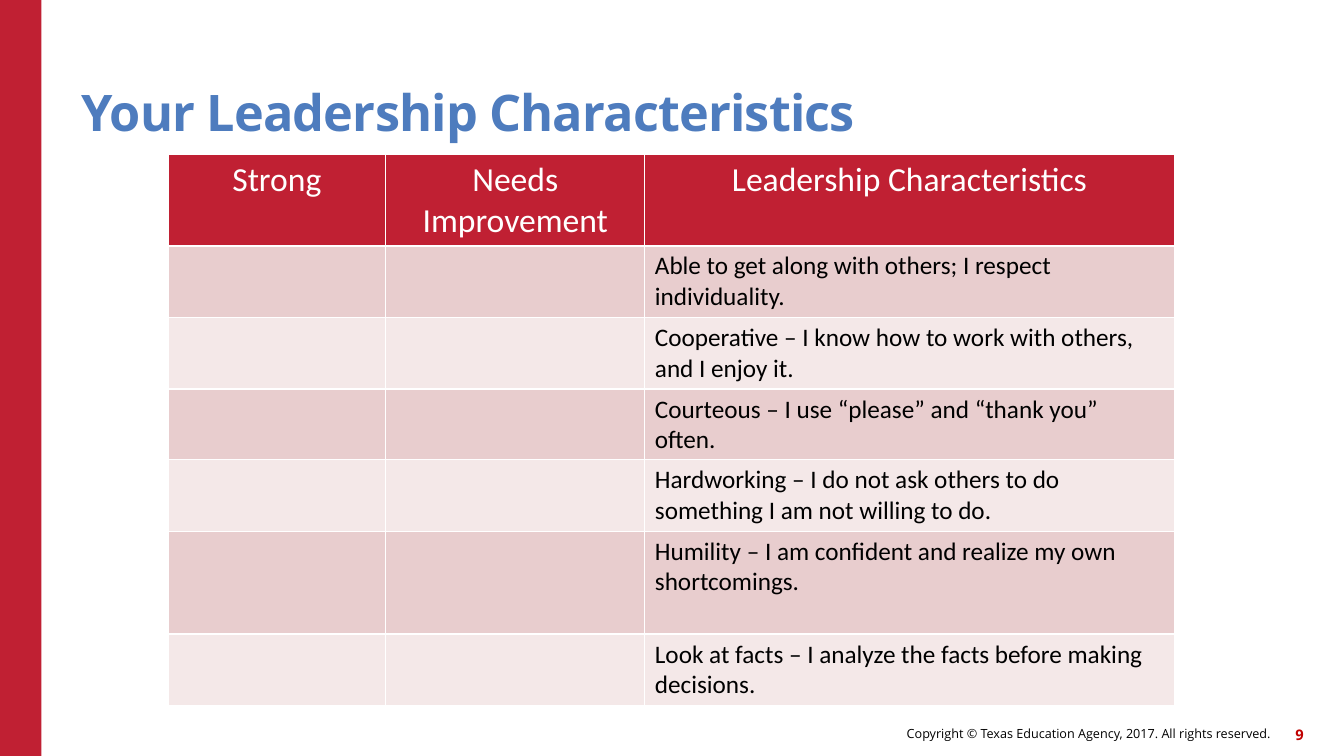
from dataclasses import dataclass

from pptx import Presentation
from pptx import util as u
from pptx.dml.color import RGBColor
from pptx.enum import shapes, text

WIDTH, HEIGHT = 13.33, 7.5
COLOURS = {
    "red": "C02033",
    "number": "C00000",
    "title": "4E7CBE",
    "black": "000000",
    "white": "FFFFFF",
    "odd": "E8CDCE",
    "even": "F4E8E8",
}
COLUMN_WIDTHS = [2.16, 2.57, 5.25]
HEADER_HEIGHT = 0.91
HEADINGS = ["Strong", "Needs\nImprovement", "Leadership Characteristics"]


@dataclass(frozen=True)
class Area:
    left: float
    top: float
    width: float
    height: float

    def emu(self) -> tuple:
        return tuple(u.Inches(length) for length in
                     (self.left, self.top, self.width, self.height))


@dataclass(frozen=True)
class Label:
    words: str
    area: Area
    size: float
    colour: str
    bold: bool = False
    align: text.PP_ALIGN = text.PP_ALIGN.RIGHT
    anchor: text.MSO_ANCHOR = text.MSO_ANCHOR.MIDDLE
    line_spacing: float = 1.0
    tracking: int = 0


@dataclass(frozen=True)
class Trait:
    words: str
    height: float = 0.71


LABELS = [
    Label("Copyright © Texas Education Agency, 2017. All rights reserved.",
          Area(6.14, 7.12, 6.46, 0.32), 9, "black"),
    Label("9", Area(12.51, 7.13, 0.42, 0.32), 10.5, "number", bold=True),
    Label("Your Leadership Characteristics", Area(0.81, 0.45, 11, 0.96), 36,
          "title", bold=True, align=text.PP_ALIGN.LEFT,
          anchor=text.MSO_ANCHOR.BOTTOM, line_spacing=0.9, tracking=-60),
]
TRAITS = [
    Trait("Able to get along with others; I respect individuality."),
    Trait("Cooperative – I know how to work with others, and I enjoy it."),
    Trait("Courteous – I use “please” and “thank you” often.", 0.61),
    Trait("Hardworking – I do not ask others to do something I am not willing to do."),
    Trait("Humility – I am confident and realize my own shortcomings.", 1.02),
    Trait("Look at facts – I analyze the facts before making decisions."),
]


def rgb(name: str) -> RGBColor:
    return RGBColor.from_string(COLOURS[name])


def write(frame, words: str, *, size: float, colour: str, font: str = "Calibri",
          bold: bool = False, align=text.PP_ALIGN.LEFT,
          line_spacing: float = 1.0, tracking: int = 0) -> None:
    for index, line in enumerate(words.split("\n")):
        para = frame.add_paragraph() if index else frame.paragraphs[0]
        para.alignment = align
        para.line_spacing = line_spacing
        span = para.add_run()
        span.text = line
        span.font.name = font
        span.font.size = u.Pt(size)
        span.font.bold = bold
        span.font.color.rgb = rgb(colour)
        if tracking:
            span.font._element.set("spc", str(tracking))


def draw_band(page, area: Area) -> None:
    band = page.shapes.add_shape(shapes.MSO_SHAPE.RECTANGLE, *area.emu())
    band.shadow.inherit = False
    band.fill.solid()
    band.fill.fore_color.rgb = rgb("red")
    band.line.fill.background()


def draw_label(page, label: Label) -> None:
    frame = page.shapes.add_textbox(*label.area.emu()).text_frame
    frame.word_wrap = True
    frame.vertical_anchor = label.anchor
    frame.margin_left = frame.margin_right = 0
    frame.margin_top = frame.margin_bottom = 0
    write(frame, label.words, size=label.size, colour=label.colour,
          font="Open Sans", bold=label.bold, align=label.align,
          line_spacing=label.line_spacing, tracking=label.tracking)


def draw_table(page, left: float, top: float) -> None:
    heights = [HEADER_HEIGHT] + [trait.height for trait in TRAITS]
    area = Area(left, top, sum(COLUMN_WIDTHS), sum(heights))
    table = page.shapes.add_table(len(heights), len(COLUMN_WIDTHS), *area.emu()).table
    for column, width in zip(table.columns, COLUMN_WIDTHS):
        column.width = u.Inches(width)
    for index, (row, height) in enumerate(zip(table.rows, heights)):
        row.height = u.Inches(height)
        fill = "red" if index == 0 else "odd" if index % 2 else "even"
        for cell in row.cells:
            cell.fill.solid()
            cell.fill.fore_color.rgb = rgb(fill)
    for index, heading in enumerate(HEADINGS):
        write(table.cell(0, index).text_frame, heading, size=24, colour="white",
              align=text.PP_ALIGN.CENTER)
    for index, trait in enumerate(TRAITS, start=1):
        write(table.cell(index, 2).text_frame, trait.words, size=18, colour="black")


def main() -> None:
    deck = Presentation()
    deck.slide_width, deck.slide_height = u.Inches(WIDTH), u.Inches(HEIGHT)
    page = deck.slides.add_slide(deck.slide_layouts[6])
    draw_band(page, Area(0, 0, 0.41, HEIGHT))
    for label in LABELS:
        draw_label(page, label)
    draw_table(page, WIDTH / 8, 1.53)
    deck.save("out.pptx")


if __name__ == "__main__":
    main()
